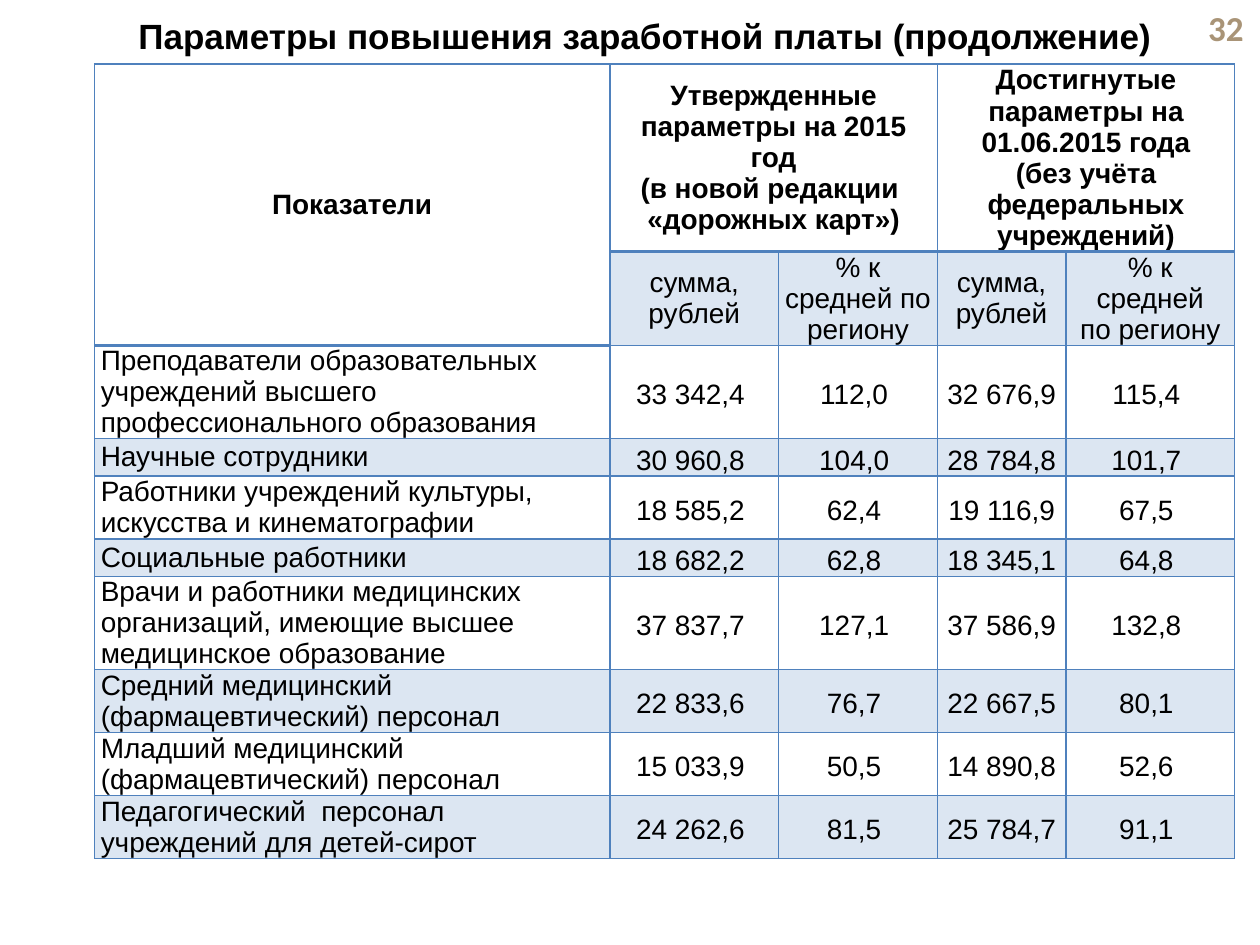
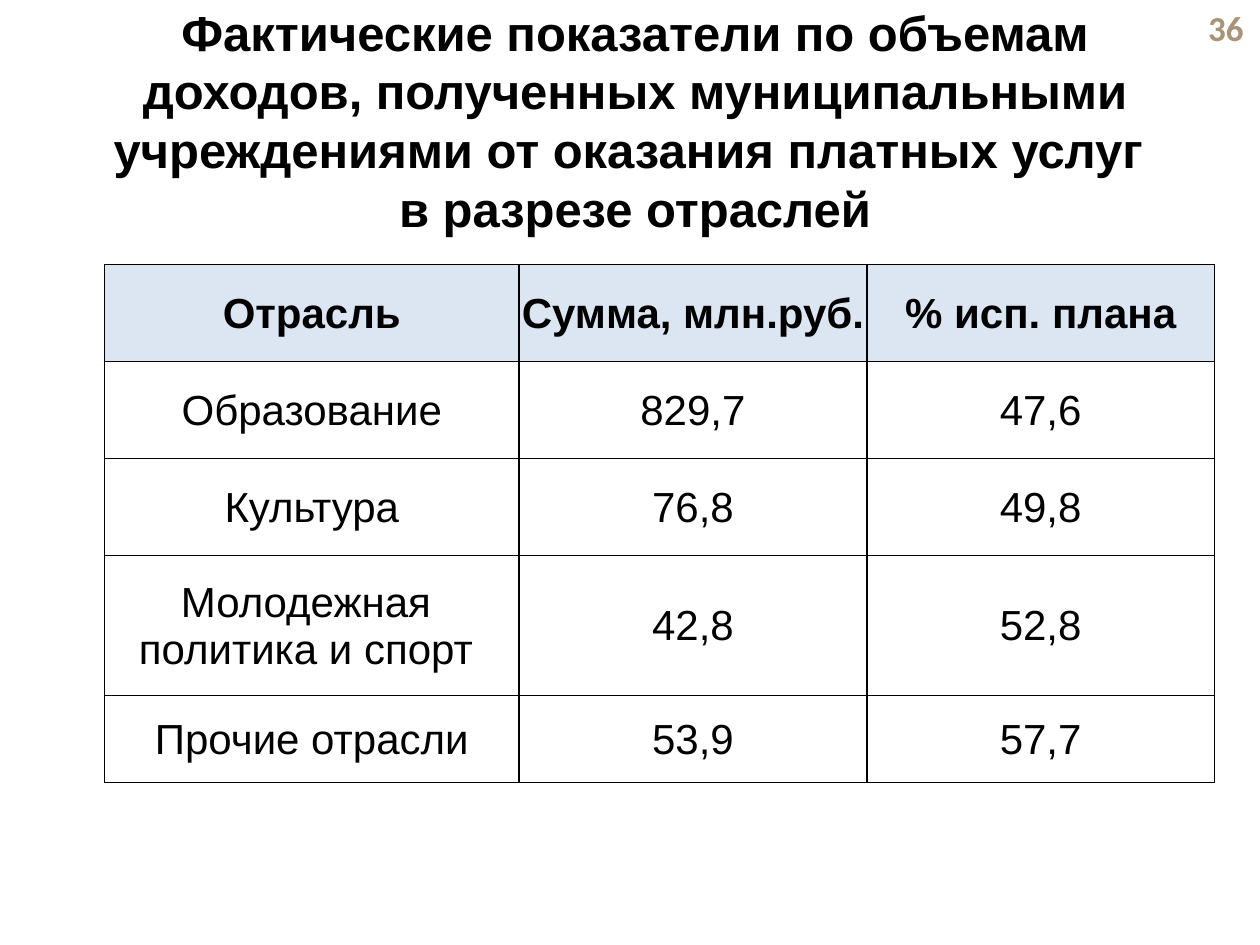
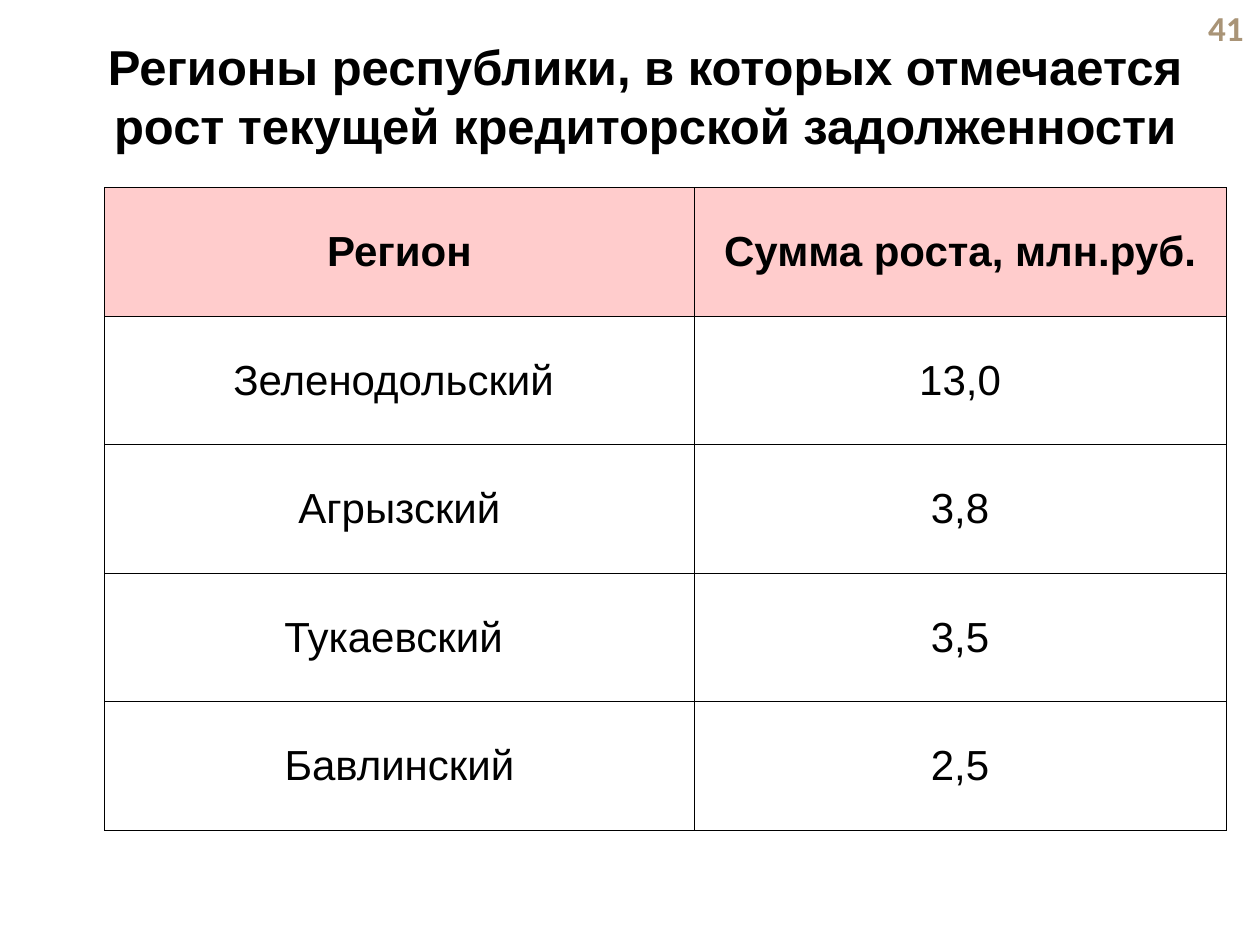
import pptx
import pptx.util
import pptx.dml.color
import pptx.enum.text
import pptx.oxml.ns
import lxml.etree

Inches = pptx.util.Inches
Pt = pptx.util.Pt
qn = pptx.oxml.ns.qn
ALIGN = pptx.enum.text.PP_ALIGN
MIDDLE = pptx.enum.text.MSO_ANCHOR.MIDDLE

HUES = {"ink": "000000", "page": "A99477", "blue": "4F81BD", "pale": "DCE6F2", "pink": "FFCCCC"}

PAY = [
    ("Показатели", "Утвержденные параметры на 2015 год\n(в новой редакции \n«дорожных карт»)", "",
     "Достигнутые параметры на 01.06.2015 года\n(без учёта федеральных учреждений)", ""),
    ("", "сумма, рублей", "% к средней по региону", "сумма, рублей", "% к средней\nпо региону"),
    ("Преподаватели образовательных учреждений высшего профессионального образования",
     "33 342,4 ", "112,0 ", "32 676,9 ", "115,4 "),
    ("Научные сотрудники", "30 960,8 ", "104,0 ", "28 784,8 ", "101,7 "),
    ("Работники учреждений культуры, искусства и кинематографии",
     "18 585,2 ", "62,4 ", "19 116,9 ", "67,5 "),
    ("Социальные работники", "18 682,2 ", "62,8 ", "18 345,1 ", "64,8 "),
    ("Врачи и работники медицинских организаций, имеющие высшее медицинское образование",
     "37 837,7 ", "127,1 ", "37 586,9 ", "132,8 "),
    ("Средний медицинский (фармацевтический) персонал", "22 833,6 ", "76,7 ", "22 667,5 ", "80,1 "),
    ("Младший медицинский (фармацевтический) персонал", "15 033,9 ", "50,5 ", "14 890,8 ", "52,6 "),
    ("Педагогический  персонал учреждений для детей-сирот",
     "24 262,6 ", "81,5 ", "25 784,7 ", "91,1 "),
]
INCOME = [
    ("Отрасль", "Сумма, млн.руб.", "% исп. плана"),
    ("Образование", "829,7", "47,6"),
    ("Культура", "76,8", "49,8"),
    ("Молодежная \nполитика и спорт ", "42,8", "52,8"),
    ("Прочие отрасли", "53,9", "57,7"),
]
DEBT = [
    ("Регион", "Сумма роста, млн.руб."),
    ("Зеленодольский ", "13,0"),
    ("Агрызский", "3,8"),
    ("Тукаевский ", "3,5"),
    ("Бавлинский", "2,5"),
]


def pay_look(row, col):
    data = row > 1 and col > 0
    return {
        "fill": "pale" if row % 2 and (row > 1 or col) else None,
        "pad": (0.07, 0, 0.07, 0) if data else (0.05, 0, 0.05, 0),
        "align": ALIGN.LEFT if row > 1 and col == 0 else ALIGN.CENTER,
        "lead": 1.2 if data else None,
        "base": 2 if row == 0 or (row, col) == (1, 0) else 1,
    }


def income_look(row, col):
    return {"fill": None if row else "pale", "pad": (0.01, 0.01, 0.01, 0)}


def debt_look(row, col):
    return {"fill": None if row else "pink"}


SLIDES = [
    {"page": "32", "title": "Параметры повышения заработной платы (продолжение)",
     "size": 20, "box": (0.67, 0.05, 8.9, 0.47),
     "rows": PAY, "at": (0.75, 0.51), "wide": (4.09, 1.34, 1.26, 1.02, 1.34),
     "high": (1.49, 0.74, 0.74, 0.27, 0.5, 0.27, 0.74, 0.5, 0.5, 0.5),
     "text": 16, "line": ("blue", 1), "look": pay_look,
     "spans": [(0, 0, 1, 0), (0, 1, 0, 2), (0, 3, 0, 4)]},
    {"page": "36", "title": "Фактические показатели по объемам доходов, полученных муниципальными "
                            "учреждениями от оказания платных услуг \nв разрезе отраслей",
     "size": 28, "box": (0.67, 0.05, 8.74, 1.8),
     "rows": INCOME, "at": (0.83, 2.1), "wide": (3.29, 2.76, 2.76),
     "high": (0.77, 0.77, 0.77, 1.11, 0.69),
     "text": 24, "line": ("ink", 1), "look": income_look, "spans": []},
    {"page": "41", "title": "Регионы республики, в которых отмечается рост текущей кредиторской задолженности",
     "size": 28, "box": (0.67, 0.05, 8.9, 1.42),
     "rows": DEBT, "at": (0.83, 1.49), "wide": (4.68, 4.22), "high": (1.02,) * 5,
     "text": 24, "line": ("ink", 0.5), "look": debt_look, "spans": []},
]


def write(frame, text, size, bold=True, align=ALIGN.CENTER, lead=None, name="Arial", hue="ink"):
    para = frame.paragraphs[0]
    para.text = text
    para.alignment = align
    para.line_spacing = lead
    for run in para.runs:
        for key, value in {"size": Pt(size), "bold": bold, "name": name}.items():
            setattr(run.font, key, value)
        run.font.color.rgb = pptx.dml.color.RGBColor.from_string(HUES[hue])
    for gap in para._p.findall(qn("a:br")):
        lxml.etree.SubElement(gap, qn("a:rPr"), sz=str(size * 100))


def place(shape, box):
    for key, value in zip(("left", "top", "width", "height"), box):
        setattr(shape, key, Inches(value))


def set_frame(frame):
    form = {"word_wrap": True, "vertical_anchor": MIDDLE,
            "auto_size": pptx.enum.text.MSO_AUTO_SIZE.NONE}
    for key, value in form.items():
        setattr(frame, key, value)


def edge(cell, hue, width, base):
    props = cell._tc.get_or_add_tcPr()
    for side in "LRTB":
        points = base if side == "B" else width
        line = lxml.etree.SubElement(props, qn("a:ln" + side), w=str(int(Pt(points))))
        fill = lxml.etree.SubElement(line, qn("a:solidFill"))
        lxml.etree.SubElement(fill, qn("a:srgbClr"), val=HUES[hue])


def add_grid(slide, item):
    rows, wide, high = item["rows"], item["wide"], item["high"]
    box = (*item["at"], sum(wide), sum(high))
    table = slide.shapes.add_table(len(rows), len(wide), *map(Inches, box)).table
    table.first_row = table.horz_banding = False
    for col, width in zip(table.columns, wide):
        col.width = Inches(width)
    for row, height in zip(table.rows, high):
        row.height = Inches(height)
    for top, left, end, right in item["spans"]:
        table.cell(top, left).merge(table.cell(end, right))
    hue, width = item["line"]
    for r, row in enumerate(rows):
        for c, text in enumerate(row):
            cell, look = table.cell(r, c), item["look"](r, c)
            edge(cell, hue, width, look.get("base", width))
            cell.vertical_anchor = MIDDLE
            for side, pad in zip(("left", "top", "right", "bottom"), look.get("pad", (0.1, 0.05, 0.1, 0.05))):
                setattr(cell, "margin_" + side, Inches(pad))
            if look["fill"]:
                cell.fill.solid()
                cell.fill.fore_color.rgb = pptx.dml.color.RGBColor.from_string(HUES[look["fill"]])
            else:
                cell.fill.background()
            if text:
                write(cell.text_frame, text, item["text"], r == 0,
                      look.get("align", ALIGN.CENTER), look.get("lead"))


def add_page(deck, item):
    slide = deck.slides.add_slide(deck.slide_layouts[5])
    title = slide.shapes.title
    place(title, item["box"])
    set_frame(title.text_frame)
    write(title.text_frame, item["title"], item["size"])
    add_grid(slide, item)
    mark = slide.shapes.add_textbox(*map(Inches, (9.33, 0.05, 0.64, 0.34)))
    set_frame(mark.text_frame)
    write(mark.text_frame, item["page"], 20, align=ALIGN.RIGHT, name="Calibri", hue="page")


def main():
    deck = pptx.Presentation()
    deck.slide_width, deck.slide_height = Inches(10), Inches(7.5)
    for item in SLIDES:
        add_page(deck, item)
    deck.save("out.pptx")


if __name__ == "__main__":
    main()
